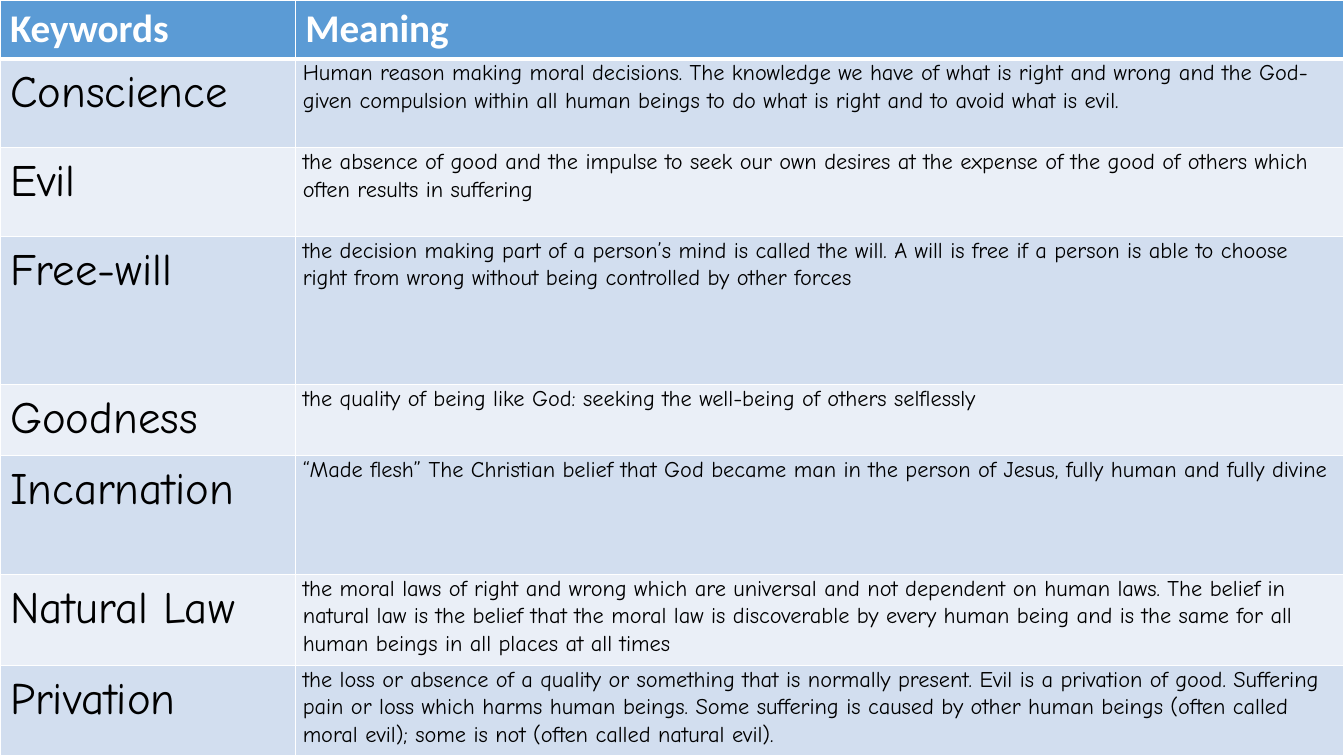
from lxml.etree import SubElement
from pptx import Presentation
from pptx.dml.color import RGBColor
from pptx.oxml.ns import qn
from pptx.util import Cm, Pt

COLOURS = {
    "header": "5B9BD5",
    "odd": "D2DEEF",
    "even": "EAEFF7",
    "border": "FFFFFF",
    "header_text": "FFFFFF",
    "text": "000000",
}
HEADINGS = ("Keywords", "Meaning")
HEADER_HEIGHT = 1.48
KEYWORD_WIDTH = 7.44
# Keyword, meaning, row height in cm
GLOSSARY = [
    ("Conscience",
     "Human reason making moral decisions. The knowledge we have of what is right "
     "and wrong and the God-given compulsion within all human beings to do what is "
     "right and to avoid what is evil.", 2.24),
    ("Evil",
     "the absence of good and the impulse to seek our own desires at the expense of "
     "the good of others which often results in suffering", 2.24),
    ("Free-will",
     "the decision making part of a person’s mind is called the will. A will is free "
     "if a person is able to choose right from wrong without being controlled by "
     "other forces", 3.73),
    ("Goodness",
     "the quality of being like God: seeking the well-being of others selflessly", 1.78),
    ("Incarnation",
     "“Made flesh” The Christian belief that God became man in the person of Jesus, "
     "fully human and fully divine", 3.0),
    ("Natural Law",
     "the moral laws of right and wrong which are universal and not dependent on "
     "human laws. The belief in natural law is the belief that the moral law is "
     "discoverable by every human being and is the same for all human beings in all "
     "places at all times", 2.29),
    ("Privation",
     "the loss or absence of a quality or something that is normally present. Evil is "
     "a privation of good. Suffering pain or loss which harms human beings. Some "
     "suffering is caused by other human beings (often called moral evil); some is "
     "not (often called natural evil).", 2.29),
]


def set_borders(cell, top=1, bottom=1):
    """Draw all four cell borders; must run before the fill is set."""
    properties = cell._tc.get_or_add_tcPr()
    for side, width in (("L", 1), ("R", 1), ("T", top), ("B", bottom)):
        line = SubElement(properties, qn(f"a:ln{side}"), w=str(Pt(width)))
        fill = SubElement(line, qn("a:solidFill"))
        SubElement(fill, qn("a:srgbClr"), val=COLOURS["border"])


def write_cell(cell, text, fill, font_name, size, colour, bold=False, spacing=None):
    cell.fill.solid()
    cell.fill.fore_color.rgb = RGBColor.from_string(COLOURS[fill])
    cell.text_frame.text = text
    paragraph = cell.text_frame.paragraphs[0]
    paragraph.line_spacing = spacing
    font = paragraph.runs[0].font
    font.name, font.size, font.bold = font_name, Pt(size), bold
    font.color.rgb = RGBColor.from_string(COLOURS[colour])


def add_glossary(slide, left, top, width, height):
    glossary = slide.shapes.add_table(
        len(GLOSSARY) + 1, len(HEADINGS), left, top, width, height).table
    glossary.columns[0].width = Cm(KEYWORD_WIDTH)
    glossary.columns[1].width = width - Cm(KEYWORD_WIDTH)

    glossary.rows[0].height = Cm(HEADER_HEIGHT)
    for column, heading in enumerate(HEADINGS):
        cell = glossary.cell(0, column)
        set_borders(cell, bottom=3)
        write_cell(cell, heading, "header", "Calibri", 28, "header_text", bold=True)

    for row, (keyword, meaning, row_height) in enumerate(GLOSSARY, start=1):
        glossary.rows[row].height = Cm(row_height)
        band = "odd" if row % 2 else "even"
        for column, (text, size) in enumerate(((keyword, 32), (meaning, 16))):
            cell = glossary.cell(row, column)
            set_borders(cell, top=3 if row == 1 else 1)
            write_cell(cell, text, band, "Comic Neue", size, "text", spacing=1.07)
        meaning_cell = glossary.cell(row, 1)
        meaning_cell.margin_left = meaning_cell.margin_right = Cm(0.19)
        meaning_cell.margin_top = meaning_cell.margin_bottom = 0


def main():
    presentation = Presentation()
    presentation.slide_width, presentation.slide_height = Cm(33.87), Cm(19.05)
    slide = presentation.slides.add_slide(presentation.slide_layouts[6])
    add_glossary(slide, 0, 0, presentation.slide_width, presentation.slide_height)
    presentation.save("out.pptx")


if __name__ == "__main__":
    main()
